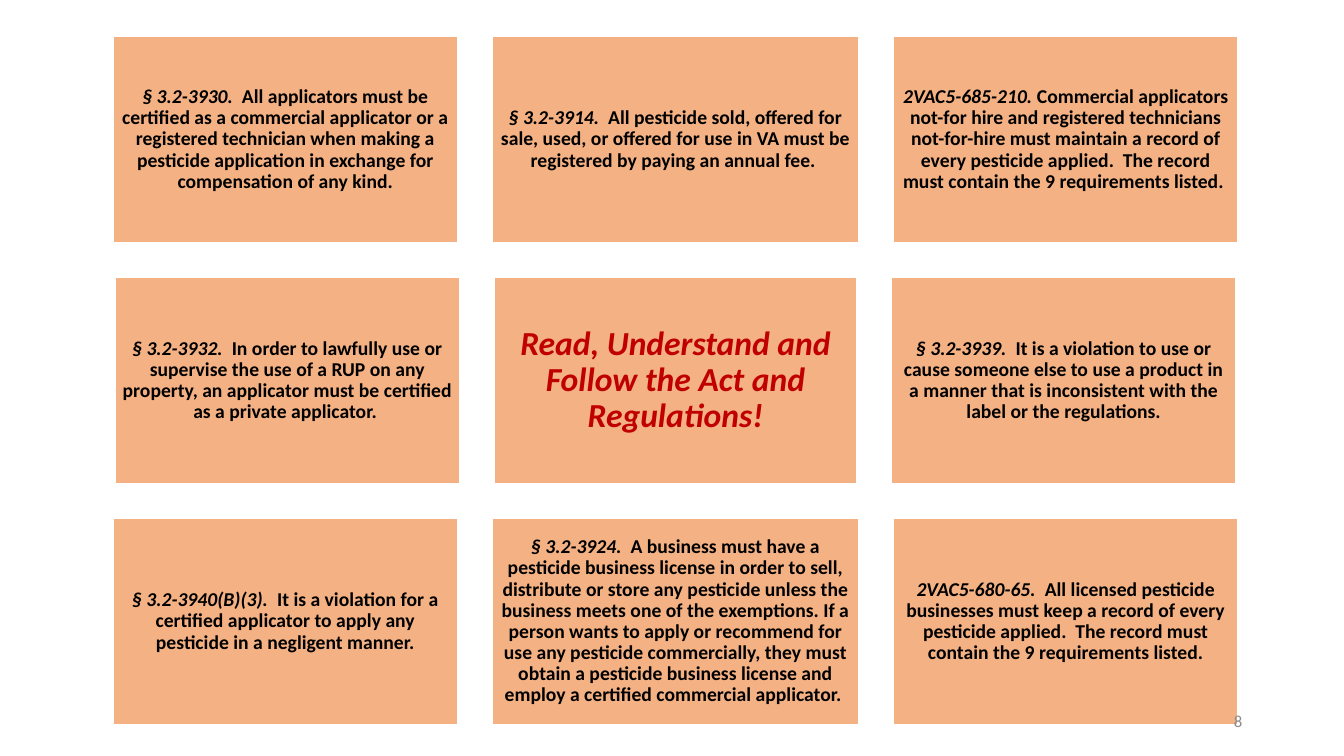
"""Build a slide with a grid of pesticide law requirements."""
from dataclasses import dataclass

from pptx import Presentation
from pptx.dml.color import RGBColor
from pptx.enum.shapes import MSO_SHAPE
from pptx.enum.text import MSO_ANCHOR, PP_ALIGN
from pptx.slide import Slide
from pptx.util import Inches, Pt

RECTANGLE = MSO_SHAPE.RECTANGLE
MIDDLE = MSO_ANCHOR.MIDDLE
CENTER = PP_ALIGN.CENTER
RIGHT = PP_ALIGN.RIGHT

FONT = "Calibri"
COLORS = {"card": "F4B183", "border": "FFFFFF", "text": "000000",
          "headline": "C00000", "number": "8C8C8C"}

GRID_CENTER, GRID_TOP = 6.7, 0.36
SIDE_WIDTH, CARD_HEIGHT = 3.42, 2.05
COLUMN_GAP, ROW_STEP = 0.34, 2.39
MIDDLE_WIDTHS = (3.64, 3.6, 3.64)


@dataclass(frozen=True)
class Card:
    """Hold the italic lead, upright body and text style of one card."""
    lead: str
    body: str = ""
    size: int = 14
    color: str = "text"
    inset: float = 0.06


ROWS = (
    (
        Card("§ 3.2-3930.  ",
             "All applicators must be certified as a commercial applicator or a "
             "registered technician when making a pesticide application in "
             "exchange for compensation of any kind."),
        Card("§ 3.2-3914.  ",
             "All pesticide sold, offered for sale, used, or offered for use in "
             "VA must be registered by paying an annual fee. "),
        Card("2VAC5-685-210. ",
             "Commercial applicators not-for hire and registered technicians "
             "not-for-hire must maintain a record of every pesticide applied.  "
             "The record must contain the 9 requirements listed. "),
    ),
    (
        Card("§ 3.2-3932.  ",
             "In order to lawfully use or supervise the use of a RUP on any "
             "property, an applicator must be certified as a private applicator. "),
        Card("Read, Understand and Follow the Act and Regulations!",
             size=24, color="headline", inset=0.1),
        Card("§ 3.2-3939.  ",
             "It is a violation to use or cause someone else to use a product in "
             "a manner that is inconsistent with the label or the regulations."),
    ),
    (
        Card("§ 3.2-3940(B)(3).  ",
             "It is a violation for a certified applicator to apply any "
             "pesticide in a negligent manner."),
        Card("§ 3.2-3924.  ",
             "A business must have a pesticide business license in order to "
             "sell, distribute or store any pesticide unless the business meets "
             "one of the exemptions. If a person wants to apply or recommend for "
             "use any pesticide commercially, they must obtain a pesticide "
             "business license and employ a certified commercial applicator. "),
        Card("2VAC5-680-65.  ",
             "All licensed pesticide businesses must keep a record of every "
             "pesticide applied.  The record must contain the 9 requirements "
             "listed."),
    ),
)


def rgb(name: str) -> RGBColor:
    """Return the named colour."""
    return RGBColor.from_string(COLORS[name])


def add_card(slide: Slide, card: Card, left: float, top: float, width: float) -> None:
    """Draw one filled card with its centred text."""
    shape = slide.shapes.add_shape(RECTANGLE, Inches(left), Inches(top),
                                   Inches(width), Inches(CARD_HEIGHT))
    shape.shadow.inherit = False
    shape.fill.solid()
    shape.fill.fore_color.rgb = rgb("card")
    shape.line.color.rgb = rgb("border")
    shape.line.width = Pt(1)
    frame = shape.text_frame
    frame.word_wrap = True
    frame.vertical_anchor = MIDDLE
    frame.margin_left = frame.margin_right = Inches(card.inset)
    frame.margin_top = frame.margin_bottom = Inches(card.inset)
    paragraph = frame.paragraphs[0]
    paragraph.alignment = CENTER
    paragraph.line_spacing = 0.9
    paragraph.font.name = FONT
    paragraph.font.size = Pt(card.size)
    paragraph.font.bold = True
    paragraph.font.color.rgb = rgb(card.color)
    lead = paragraph.add_run()
    lead.text = card.lead
    lead.font.italic = True
    if card.body:
        paragraph.add_run().text = card.body


def add_row(slide: Slide, cards: tuple[Card, ...], top: float, middle_width: float) -> None:
    """Draw three cards centred on the grid axis."""
    widths = (SIDE_WIDTH, middle_width, SIDE_WIDTH)
    left = GRID_CENTER - middle_width / 2 - COLUMN_GAP - SIDE_WIDTH
    for card, width in zip(cards, widths):
        add_card(slide, card, left, top, width)
        left += width + COLUMN_GAP


def add_slide_number(slide: Slide, number: str) -> None:
    """Write the slide number at the lower right."""
    box = slide.shapes.add_textbox(Inches(9.42), Inches(6.95), Inches(3), Inches(0.4))
    frame = box.text_frame
    frame.word_wrap = True
    frame.vertical_anchor = MIDDLE
    paragraph = frame.paragraphs[0]
    paragraph.text = number
    paragraph.alignment = RIGHT
    paragraph.font.name = FONT
    paragraph.font.size = Pt(12)
    paragraph.font.color.rgb = rgb("number")


def main() -> None:
    """Build and save the presentation."""
    presentation = Presentation()
    presentation.slide_width = Inches(13.33)
    presentation.slide_height = Inches(7.5)
    slide = presentation.slides.add_slide(presentation.slide_layouts.get_by_name("Blank"))
    for index, (cards, middle_width) in enumerate(zip(ROWS, MIDDLE_WIDTHS)):
        add_row(slide, cards, GRID_TOP + index * ROW_STEP, middle_width)
    add_slide_number(slide, "8")
    presentation.save("out.pptx")


if __name__ == "__main__":
    main()
